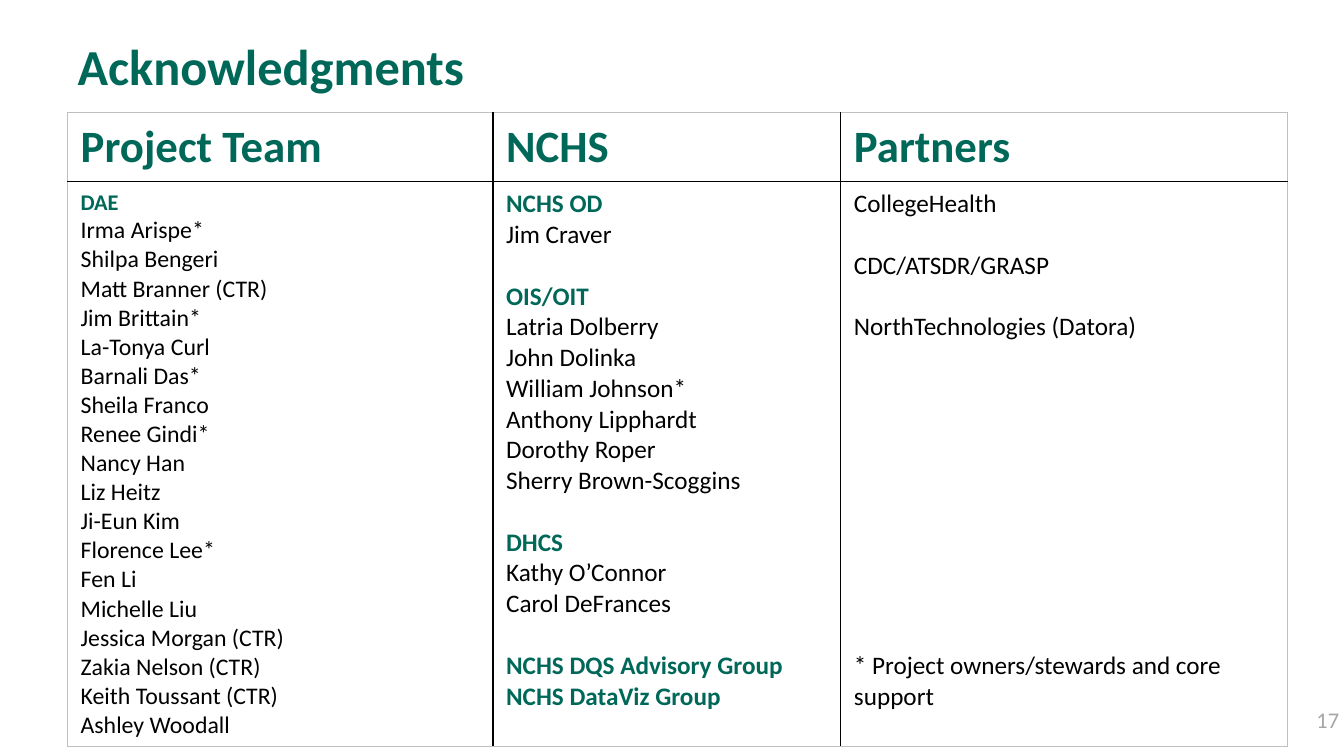
from lxml import etree
from pptx import Presentation, util as u
from pptx.dml.color import RGBColor
from pptx.enum import text
from pptx.oxml import ns

GREEN, BLACK, GREY, EDGE, WHITE = "006858", "000000", "A6A6A6", "BFBFBF", "FFFFFF"


def rgb(value):
    return RGBColor.from_string(value)


class Deck:
    font = "Calibri"

    def __init__(self, prs):
        self.s = prs.slides.add_slide(prs.slide_layouts[5])

    def place(self, sp, box):
        for name, value in zip(("left", "top", "width", "height"), box):
            setattr(sp, name, u.Inches(value))

    def add_text(self, p, words, size, color, bold=False, **layout):
        for name, value in layout.items():
            setattr(p, name, value)
        r = p.add_run()
        r.text = words
        style = {"name": self.font, "size": u.Pt(size), "bold": bold}
        for name, value in style.items():
            setattr(r.font, name, value)
        r.font.color.rgb = rgb(color)

    def title(self, words, box):
        sp = self.s.shapes.title
        self.place(sp, box)
        tf = sp.text_frame
        frame = {"vertical_anchor": text.MSO_ANCHOR.TOP, "word_wrap": True,
                 "auto_size": text.MSO_AUTO_SIZE.NONE, "margin_top": u.Inches(0.09)}
        for name, value in frame.items():
            setattr(tf, name, value)
        self.add_text(tf.paragraphs[0], words, 36, GREEN, True,
                      alignment=text.PP_ALIGN.LEFT, line_spacing=u.Pt(40))

    def page_number(self, words, box):
        tf = self.s.shapes.add_textbox(*map(u.Inches, box)).text_frame
        tf.word_wrap = True
        self.add_text(tf.paragraphs[0], words, 16, GREY, alignment=text.PP_ALIGN.RIGHT)

    def border(self, cell, side, color):
        ln = etree.SubElement(cell._tc.get_or_add_tcPr(), ns.qn(f"a:ln{side}"),
                              w=str(u.Pt(1)))
        fill = etree.SubElement(ln, ns.qn("a:solidFill"))
        etree.SubElement(fill, ns.qn("a:srgbClr"), val=color)

    def table(self, box, widths, heights):
        shape = self.s.shapes.add_table(len(heights), len(widths), *map(u.Inches, box))
        table = shape.table
        table.first_row = table.horz_banding = False
        for column, width in zip(table.columns, widths):
            column.width = u.Inches(width)
        for row, height in zip(table.rows, heights):
            row.height = u.Inches(height)
        last_row, last_col = len(heights) - 1, len(widths) - 1
        margins = {"margin_left": 0.13, "margin_right": 0.13,
                   "margin_top": 0.07, "margin_bottom": 0.07}
        for i in range(len(heights)):
            for j in range(len(widths)):
                cell = table.cell(i, j)
                for name, value in margins.items():
                    setattr(cell, name, u.Inches(value))
                outer = {"L": j == 0, "R": j == last_col, "T": i == 0, "B": i == last_row}
                for side, is_outer in outer.items():
                    self.border(cell, side, EDGE if is_outer else BLACK)
                cell.fill.solid()
                cell.fill.fore_color.rgb = rgb(WHITE)
        return table

    def groups(self, cell, groups, head_size, name_size):
        """Each group is (gap before in points, headings, names)."""
        tf = cell.text_frame
        p = tf.paragraphs[0]
        for gap, headings, names in groups:
            lines = [(h, head_size, GREEN, True) for h in headings]
            lines += [(n, name_size, BLACK, False) for n in names]
            for k, line in enumerate(lines):
                p = tf.add_paragraph() if p.runs else p
                self.add_text(p, *line, space_before=u.Pt(0 if k else gap))


LINE = 22  # height of one 18 pt line

TEAM = [(0, ["DAE"], [
    "Irma Arispe*", "Shilpa Bengeri", "Matt Branner (CTR)", "Jim Brittain*",
    "La-Tonya Curl", "Barnali Das*", "Sheila Franco", "Renee Gindi*", "Nancy Han",
    "Liz Heitz", "Ji-Eun Kim", "Florence Lee*", "Fen Li", "Michelle Liu",
    "Jessica Morgan (CTR)", "Zakia Nelson (CTR)", "Keith Toussant (CTR)",
    "Ashley Woodall"])]
NCHS = [
    (0, ["NCHS OD"], ["Jim Craver"]),
    (LINE, ["OIS/OIT"], ["Latria Dolberry", "John Dolinka", "William Johnson*",
                         "Anthony Lipphardt", "Dorothy Roper",
                         "Sherry Brown-Scoggins"]),
    (LINE, ["DHCS"], ["Kathy O’Connor", "Carol DeFrances"]),
    (LINE, ["NCHS DQS Advisory Group", "NCHS DataViz Group"], [])]
PARTNERS = [
    (0, [], ["CollegeHealth"]),
    (LINE, [], ["CDC/ATSDR/GRASP"]),
    (LINE, [], ["NorthTechnologies (Datora)"]),
    (10 * LINE, [], ["* Project owners/stewards and core support"])]
COLUMNS = [("Project Team", TEAM, 16, 17), ("NCHS", NCHS, 18, 18),
           ("Partners", PARTNERS, 18, 18)]


def main():
    prs = Presentation()
    prs.slide_width, prs.slide_height = u.Inches(13.33), u.Inches(7.5)
    deck = Deck(prs)

    # Title
    deck.title("Acknowledgments", (0.67, 0.3, 12, 1.25))

    # Table of contributors
    table = deck.table((0.67, 1.12, 12.1, 6.17), (4.22, 3.45, 4.43), (0.65, 5.42))
    for j, (heading, groups, head_size, name_size) in enumerate(COLUMNS):
        deck.groups(table.cell(0, j), [(0, [heading], [])], 32, 32)
        deck.groups(table.cell(1, j), groups, head_size, name_size)

    # Page number
    deck.page_number("17", (12.44, 6.96, 0.94, 0.51))

    prs.save("out.pptx")


if __name__ == "__main__":
    main()
